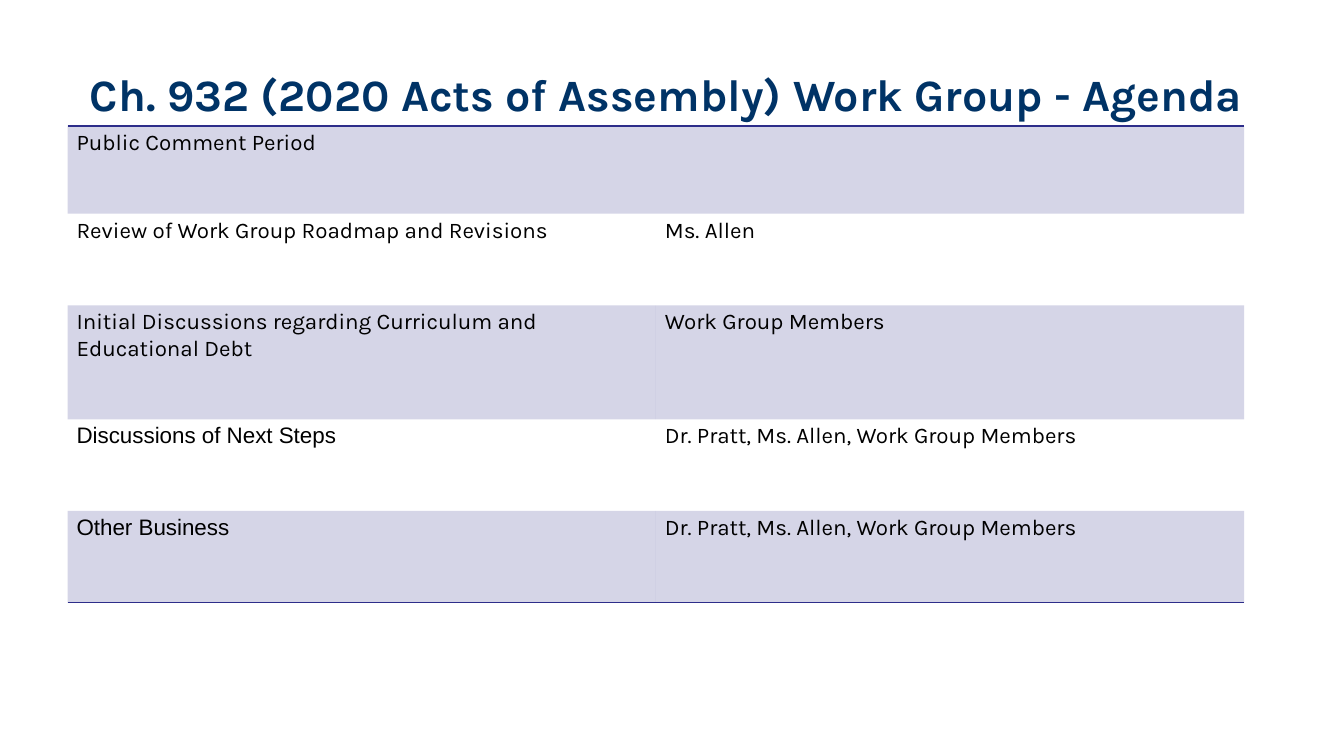
from lxml import etree
from pptx import Presentation
from pptx.dml.color import RGBColor
from pptx.enum.text import MSO_ANCHOR, PP_ALIGN
from pptx.oxml.ns import qn
from pptx.util import Inches, Pt

CENTER = PP_ALIGN.CENTER
MIDDLE = MSO_ANCHOR.MIDDLE
TITLE_ONLY_LAYOUT = 5
NO_STYLE_NO_GRID = "{2D5ABB26-0587-4C30-8999-92F81FD0307C}"

NAVY = "003366"
INDIGO = "2D2D8A"
BLACK = "000000"

TITLE = "Ch. 932 (2020 Acts of Assembly) Work Group - Agenda "
# Row height, topic, topic font, speakers
AGENDA = [
    (0.87, "Public Comment Period", "Karla", ""),
    (0.91, "Review of Work Group Roadmap and Revisions", "Karla", "Ms. Allen"),
    (1.13, "Initial Discussions regarding Curriculum and Educational Debt", "Karla",
     "Work Group Members"),
    (0.91, "Discussions of Next Steps", "Arial", "Dr. Pratt, Ms. Allen, Work Group Members"),
    (0.91, "Other Business", "Arial", "Dr. Pratt, Ms. Allen, Work Group Members"),
]


def color(value):
    return RGBColor.from_string(value)


def format_text(text_frame, font_name, size, text_color, bold=False):
    for paragraph in text_frame.paragraphs:
        for run in paragraph.runs:
            run.font.name = font_name
            run.font.size = Pt(size)
            run.font.bold = bold
            run.font.color.rgb = color(text_color)


def add_title(slide):
    title = slide.shapes.title
    title.left, title.top = Inches(0.67), Inches(0.3)
    title.width, title.height = Inches(12), Inches(1.25)
    text_frame = title.text_frame
    text_frame.text = TITLE
    text_frame.word_wrap = True
    text_frame.vertical_anchor = MIDDLE
    text_frame.paragraphs[0].alignment = CENTER
    format_text(text_frame, "Karla", 32, NAVY, bold=True)


def tint_cell(cell, fill_color, opacity):
    """Fill a cell with a colour at the given opacity in percent."""
    cell.fill.solid()
    cell.fill.fore_color.rgb = color(fill_color)
    rgb = cell._tc.tcPr.find(".//" + qn("a:srgbClr"))
    etree.SubElement(rgb, qn("a:alpha"), val=str(opacity * 1000))


def add_border(cell, tag, line_color):
    line = etree.Element(qn(tag), w=str(Pt(1)))
    fill = etree.SubElement(line, qn("a:solidFill"))
    etree.SubElement(fill, qn("a:srgbClr"), val=line_color)
    cell._tc.get_or_add_tcPr().insert(0, line)


def fill_cell(cell, text, font_name, banded):
    cell.text_frame.text = text
    format_text(cell.text_frame, font_name, 16, BLACK)
    cell.margin_left = cell.margin_right = Inches(0.09)
    cell.margin_top = cell.margin_bottom = Inches(0.04)
    if banded:
        tint_cell(cell, INDIGO, 20)
    else:
        cell.fill.background()


def add_agenda(slide):
    height = sum(row[0] for row in AGENDA)
    frame = slide.shapes.add_table(len(AGENDA), 2, Inches(0.67), Inches(1.25),
                                   Inches(11.67), Inches(height))
    table = frame.table
    table.first_row = table.horz_banding = False
    table._tbl.tblPr.find(qn("a:tableStyleId")).text = NO_STYLE_NO_GRID
    for index, (row_height, topic, topic_font, speakers) in enumerate(AGENDA):
        table.rows[index].height = Inches(row_height)
        banded = index % 2 == 0
        fill_cell(table.cell(index, 0), topic, topic_font, banded)
        fill_cell(table.cell(index, 1), speakers, "Karla", banded)
    for column in range(2):
        add_border(table.cell(0, column), "a:lnT", INDIGO)
        add_border(table.cell(len(AGENDA) - 1, column), "a:lnB", INDIGO)
    table.cell(0, 0).merge(table.cell(0, 1))


def main():
    presentation = Presentation()
    presentation.slide_width = Inches(13.33)
    presentation.slide_height = Inches(7.5)
    slide = presentation.slides.add_slide(presentation.slide_layouts[TITLE_ONLY_LAYOUT])
    add_title(slide)
    add_agenda(slide)
    presentation.save("out.pptx")


if __name__ == "__main__":
    main()
